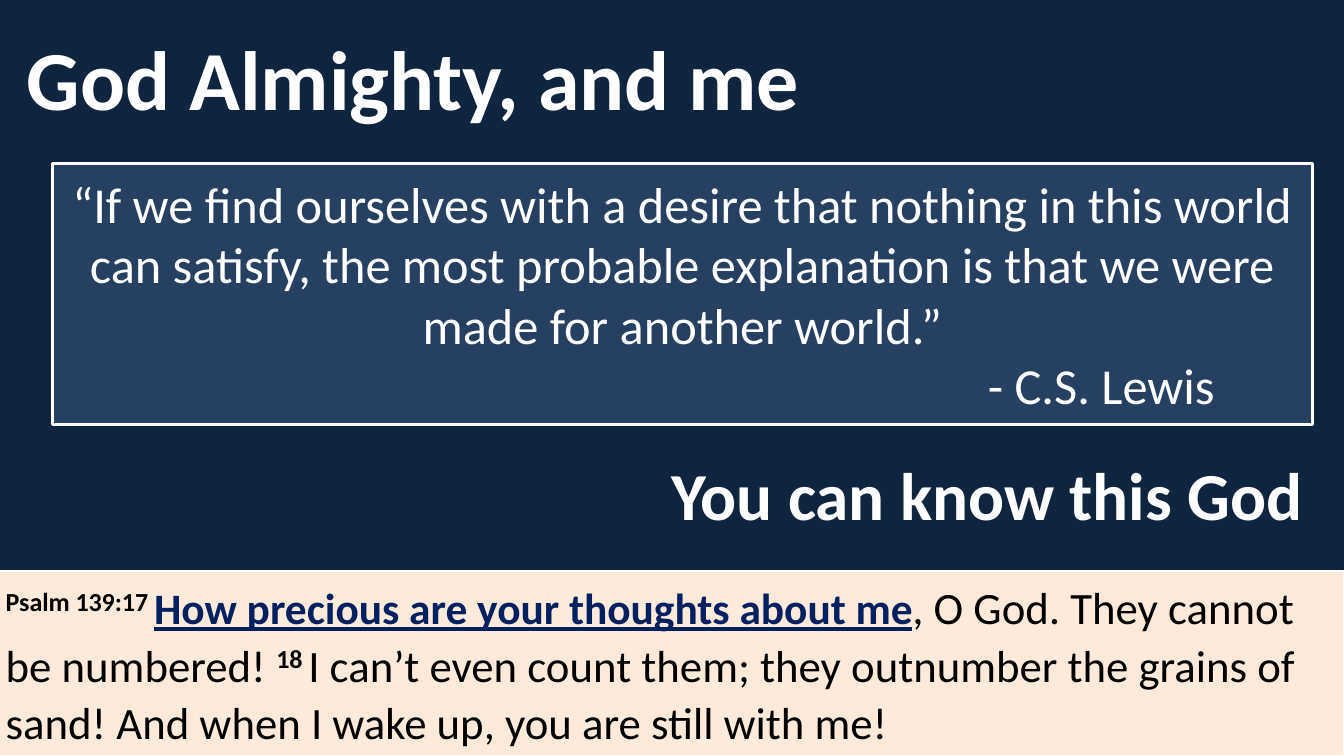
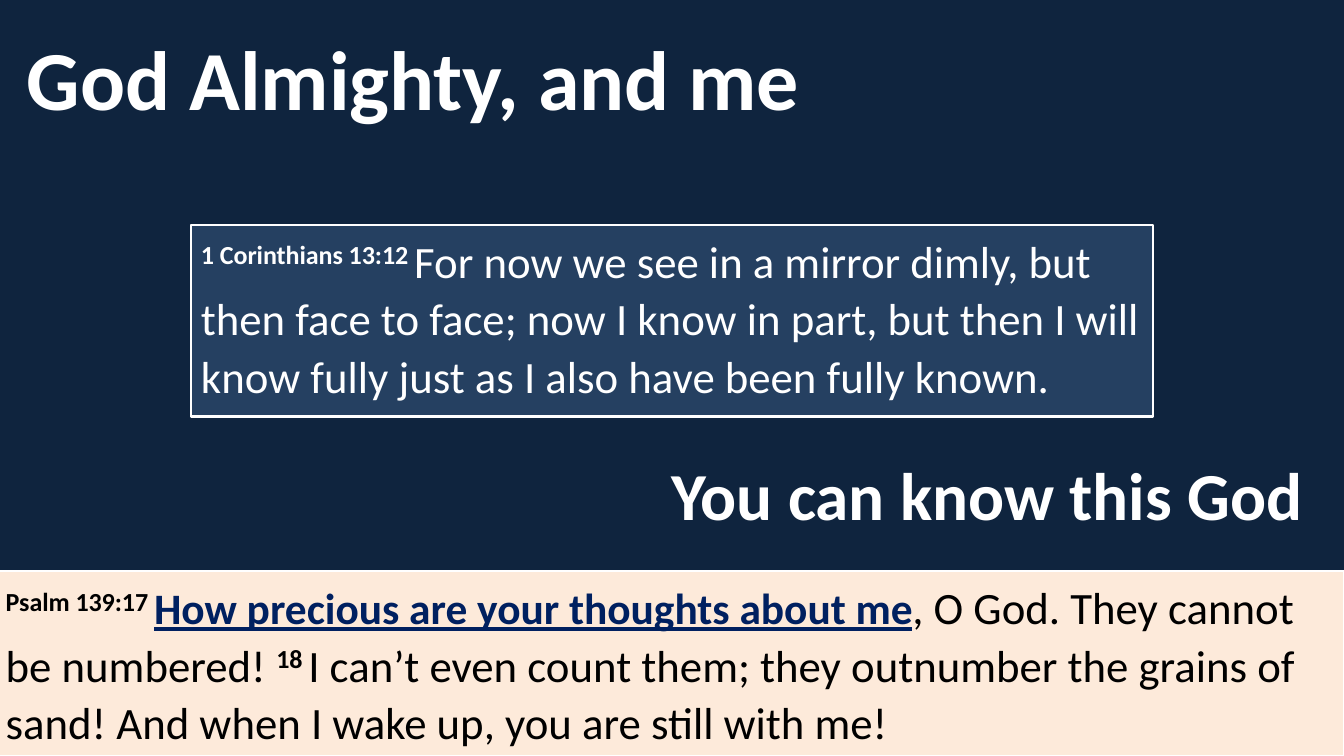
from pptx import Presentation
from pptx.dml.color import RGBColor
from pptx.enum.shapes import MSO_SHAPE
from pptx.enum.text import MSO_ANCHOR, PP_ALIGN
from pptx.util import Pt

COLORS = {"back": "0F243E", "panel": "254061", "band": "FDEADA",
          "white": "FFFFFF", "black": "000000", "navy": "002060"}
FONT = "Calibri"
WIDE, HIGH = 960, 540

# Text pieces: (words, kind), where kind is "plain", "verse" or "key"
PSALM = [
    ("Psalm 139:17 ", "verse"),
    ("How precious are your thoughts about me", "key"),
    (", O God. They cannot be numbered! ", "plain"),
    ("18 ", "verse"),
    ("I can’t even count them; they outnumber the grains of sand! "
     "And when I wake up, you are still with me!", "plain"),
]
LETTER = [
    ("1 Corinthians 13:12 ", "verse"),
    ("For now we see in a mirror dimly, but then face to face; now I know "
     "in part, but then I will know fully just as I also have been fully "
     "known.", "plain"),
]
QUOTE = ("“If we find ourselves with a desire that nothing in this world can "
         "satisfy, the most probable explanation is that we were made for "
         "another world.”")


def color(name):
    return RGBColor.from_string(COLORS[name])


def style(para, size, name, bold=False):
    font = para.font
    font.name, font.size, font.bold = FONT, Pt(size), bold
    font.color.rgb = color(name)


def heading(slide, box, text, size):
    shape = slide.shapes.add_textbox(*map(Pt, box))
    frame = shape.text_frame
    frame.word_wrap = True
    frame.vertical_anchor = MSO_ANCHOR.MIDDLE
    para = frame.paragraphs[0]
    para.text = text
    style(para, size, "white", True)


def panel(slide, box, fill, line, anchor):
    shape = slide.shapes.add_shape(MSO_SHAPE.RECTANGLE, *map(Pt, box))
    shape.shadow.inherit = False
    shape.fill.solid()
    shape.fill.fore_color.rgb = color(fill)
    shape.line.color.rgb = color("white")
    shape.line.width = Pt(line)
    frame = shape.text_frame
    frame.word_wrap = True
    frame.vertical_anchor = anchor
    return frame


def verses(slide, box, fill, ink, pieces):
    frame = panel(slide, box, fill, 1.5, MSO_ANCHOR.TOP)
    para = frame.paragraphs[0]
    para.alignment = PP_ALIGN.LEFT
    para.line_spacing = 1.07
    style(para, 32, ink)
    for text, kind in pieces:
        run = para.add_run()
        run.text = text
        if kind == "plain":
            continue
        run.font.bold = True
        if kind == "verse":
            run._r.get_or_add_rPr().set("baseline", "30000")
        else:
            run.font.size = Pt(31)
            run.font.underline = True
            run.font.color.rgb = color("navy")


def quote(slide, box, text, author):
    frame = panel(slide, box, "panel", 2, MSO_ANCHOR.MIDDLE)
    words, name = frame.paragraphs[0], frame.add_paragraph()
    words.text, name.text = text, author
    words.alignment, name.alignment = PP_ALIGN.CENTER, PP_ALIGN.LEFT
    # The author's name is indented to the right part of the box
    name._p.get_or_add_pPr().set("marL", str(Pt(661)))
    for para in (words, name):
        style(para, 36, "white")


def base(deck):
    slide = deck.slides.add_slide(deck.slide_layouts[6])
    slide.background.fill.solid()
    slide.background.fill.fore_color.rgb = color("back")
    heading(slide, (12, 10, 570, 90), "God Almighty, and me", 60)
    heading(slide, (472.5, 307.5, 487.5, 90), "You can know this God", 48)
    verses(slide, (-3, 408, WIDE + 3, HIGH - 408), "band", "black", PSALM)
    return slide


def main():
    deck = Presentation()
    deck.slide_width, deck.slide_height = Pt(WIDE), Pt(HIGH)
    quote(base(deck), (37.5, 117, 900, 186), QUOTE, "- C.S. Lewis")
    verses(base(deck), (136.5, 160.5, 687, 137), "panel", "white", LETTER)
    deck.save("out.pptx")


if __name__ == "__main__":
    main()
